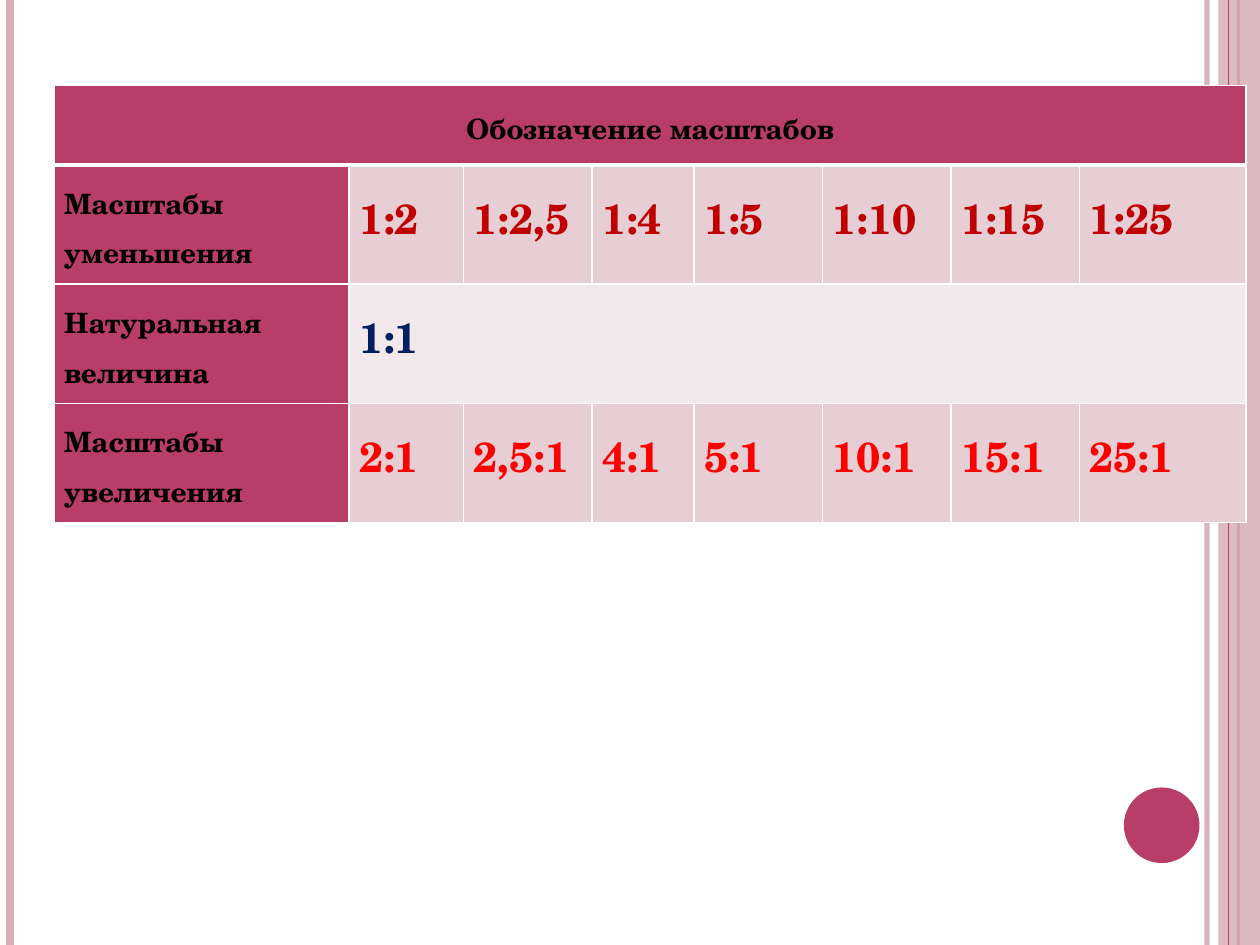
import dataclasses

import pptx
import pptx.dml.color
import pptx.enum.shapes
import pptx.enum.text
import pptx.oxml.ns
import pptx.util
from lxml import etree

Inches = pptx.util.Inches
Pt = pptx.util.Pt
qn = pptx.oxml.ns.qn


@dataclasses.dataclass(frozen=True)
class Theme:
    font: str = "TeX Gyre Schola"
    accent: str = "B83D68"
    rail: str = "D8AFB9"
    band: str = "E6CED4"
    band_light: str = "F3E8EB"
    white: str = "FFFFFF"
    label: str = "000000"
    reduction: str = "C00000"
    natural: str = "002060"
    enlargement: str = "FF0000"
    label_size: int = 16
    value_size: int = 24


THEME = Theme()

TITLE = "Обозначение масштабов"
# label, values, text colour, fill
SCALES = [
    ("Масштабы уменьшения",
     ["1:2", "1:2,5", "1:4", "1:5", "1:10", "1:15", "1:25"],
     THEME.reduction, THEME.band),
    ("Натуральная величина", ["1:1"], THEME.natural, THEME.band_light),
    ("Масштабы увеличения",
     ["2:1", "2,5:1", "4:1", "5:1", "10:1", "15:1", "25:1"],
     THEME.enlargement, THEME.band),
]
COLUMNS = [2.34, 0.91, 1.02, 0.81, 1.02, 1.02, 1.02, 1.32]
ROWS = [0.63, 0.86, 0.79, 0.79]


def rgb(color):
    return pptx.dml.color.RGBColor.from_string(color)


def paint(fill, color, opacity=100):
    fill.solid()
    fill.fore_color.rgb = rgb(color)
    if opacity < 100:
        solid = fill._xPr.find(qn("a:solidFill"))
        etree.SubElement(solid[0], qn("a:alpha"), val=str(opacity * 1000))


def add_rail(slide, x, top, height, color, width, opacity=100):
    """Draw a vertical line."""
    line = slide.shapes.add_connector(
        pptx.enum.shapes.MSO_CONNECTOR.STRAIGHT,
        Inches(x), Inches(top), Inches(x), Inches(top + height))
    paint(line.line.fill, color, opacity)
    line.line.width = Pt(width)
    etree.SubElement(line._element.spPr, qn("a:effectLst"))


def add_plain_shape(slide, kind, box, color, opacity=100):
    sp = slide.shapes.add_shape(kind, *map(Inches, box))
    sp.shadow.inherit = False
    paint(sp.fill, color, opacity)
    sp.line.fill.background()


def add_decoration(slide, left, top, width, height):
    """Draw the side rails, the right-hand strip and the disc."""
    shapes = pptx.enum.shapes.MSO_SHAPE
    right = left + width
    add_rail(slide, right - 0.42, top, height, THEME.rail, 3, 93)
    add_rail(slide, left + 0.08, top, height, THEME.rail, 4.5)
    add_rail(slide, right - 0.17, top, height, THEME.accent, 1.5)
    add_plain_shape(slide, shapes.RECTANGLE,
                    (right - 0.33, top, 0.33, height), THEME.rail, 87)
    add_rail(slide, right - 0.25, top, height, THEME.accent, 0.75)
    add_plain_shape(slide, shapes.OVAL,
                    (right - 1.08, top + height - 1.25, 0.6, 0.6), THEME.accent)


def write(tf, text, size, color, align=pptx.enum.text.PP_ALIGN.LEFT):
    p = tf.paragraphs[0]
    p.alignment = align
    p.line_spacing = 1.15
    p.space_after = Pt(15)
    r = p.add_run()
    r.text = text
    r.font.name = THEME.font
    r.font.size = Pt(size)
    r.font.bold = True
    r.font.color.rgb = rgb(color)


def set_borders(cell, **widths):
    """Give the cell white borders; widths are in points, keyed L, R, T, B."""
    tc_pr = cell._tc.get_or_add_tcPr()
    for i, side in enumerate("LRTB"):
        ln = etree.Element(qn("a:ln" + side), w=str(Pt(widths.get(side, 1))))
        fill = etree.SubElement(ln, qn("a:solidFill"))
        etree.SubElement(fill, qn("a:srgbClr"), val=THEME.white)
        tc_pr.insert(i, ln)


def style_grid(table):
    for i, row in enumerate(table.rows):
        header_edge = {0: {"B": 3}, 1: {"T": 3}}.get(i, {})
        for cell in row.cells:
            cell.margin_left = cell.margin_right = Inches(0.08)
            cell.margin_top = cell.margin_bottom = Inches(0.08)
            paint(cell.fill, THEME.accent)
            set_borders(cell, **header_edge)


def add_scale_table(slide, left, top, width, height):
    table = slide.shapes.add_table(
        len(ROWS), len(COLUMNS),
        *map(Inches, (left, top, width, height))).table
    for column, size in zip(table.columns, COLUMNS):
        column.width = Inches(size)
    for row, size in zip(table.rows, ROWS):
        row.height = Inches(size)
    style_grid(table)

    last = len(COLUMNS) - 1
    header = table.cell(0, 0)
    header.merge(table.cell(0, last))
    header.vertical_anchor = pptx.enum.text.MSO_ANCHOR.MIDDLE
    write(header.text_frame, TITLE, THEME.label_size, THEME.label,
          align=pptx.enum.text.PP_ALIGN.CENTER)

    for i, (label, values, color, fill) in enumerate(SCALES, start=1):
        write(table.cell(i, 0).text_frame, label, THEME.label_size, THEME.label)
        for j in range(1, last + 1):
            paint(table.cell(i, j).fill, fill)
        for j, value in enumerate(values, start=1):
            write(table.cell(i, j).text_frame, value, THEME.value_size, color)
        if len(values) == 1:
            table.cell(i, 1).merge(table.cell(i, last))


def main():
    prs = pptx.Presentation()
    prs.slide_width, prs.slide_height = Inches(10), Inches(7.5)
    slide = prs.slides.add_slide(prs.slide_layouts[6])
    add_decoration(slide, 0, 0, 10, 7.5)
    add_scale_table(slide, 0.43, 0.68, sum(COLUMNS), sum(ROWS))
    prs.save("out.pptx")


if __name__ == "__main__":
    main()
